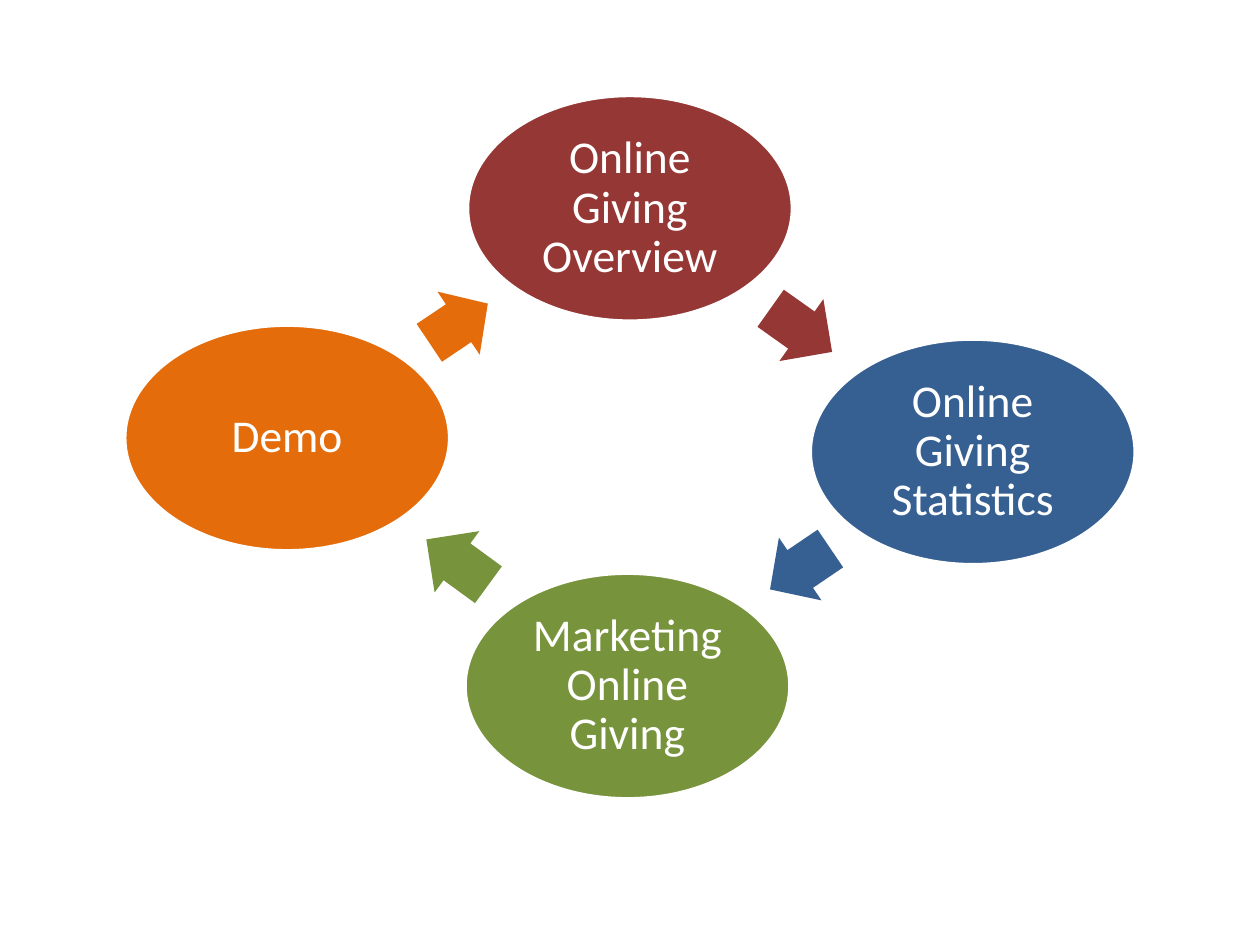
from math import atan2, degrees

from pptx import Presentation
from pptx.dml.color import RGBColor
from pptx.enum.shapes import MSO_SHAPE as SHAPE
from pptx.enum.text import MSO_ANCHOR as ANCHOR, PP_ALIGN as ALIGN
from pptx.util import Cm, Pt

COLORS = {"red": "953735", "blue": "376092", "green": "77933C",
          "orange": "E46C0A", "white": "FFFFFF"}

# Cycle steps: text, colour, centre x and y, length of the arrow to the next step (cm)
STEPS = [
    ("Online Giving Overview", "red", 12.7, 4.2, 1.52),
    ("Online Giving Statistics", "blue", 19.61, 9.11, 1.47),
    ("Marketing Online Giving", "green", 12.65, 13.83, 1.55),
    ("Demo", "orange", 5.79, 8.83, 1.42),
]
STEP_W, STEP_H = 6.55, 4.55
ARROW_H = 1.53


def rgb(name):
    return RGBColor.from_string(COLORS[name])


def add_centred(s, kind, x, y, w, h, color):
    sp = s.shapes.add_shape(kind, Cm(x - w / 2), Cm(y - h / 2), Cm(w), Cm(h))
    sp.shadow.inherit = False
    sp.fill.solid()
    sp.fill.fore_color.rgb = rgb(color)
    sp.line.fill.background()
    return sp


def write(sp, text, size=26, color="white", font="Calibri", inset=0.1):
    tf = sp.text_frame
    tf.word_wrap = True
    tf.vertical_anchor = ANCHOR.MIDDLE
    tf.margin_left = tf.margin_right = tf.margin_top = tf.margin_bottom = Cm(inset)
    p = tf.paragraphs[0]
    p.alignment = ALIGN.CENTER
    p.line_spacing = 0.9
    r = p.add_run()
    r.text = text
    r.font.size = Pt(size)
    r.font.name = font
    r.font.color.rgb = rgb(color)


prs = Presentation()
prs.slide_width, prs.slide_height = Cm(25.4), Cm(19.05)
s = prs.slides.add_slide(prs.slide_layouts[6])

for i, (text, color, x, y, length) in enumerate(STEPS):
    # Step
    sp = add_centred(s, SHAPE.OVAL, x, y, STEP_W, STEP_H, color)
    sp.line.color.rgb = rgb("white")
    sp.line.width = Pt(2)
    write(sp, text)

    # Arrow halfway to the next step, pointing at it
    next_x, next_y = STEPS[(i + 1) % len(STEPS)][2:4]
    arrow = add_centred(s, SHAPE.RIGHT_ARROW, (x + next_x) / 2, (y + next_y) / 2,
                        length, ARROW_H, color)
    arrow.adjustments[0] = 0.6
    arrow.adjustments[1] = 0.5
    arrow.rotation = degrees(atan2(next_y - y, next_x - x)) % 360

prs.save("out.pptx")
